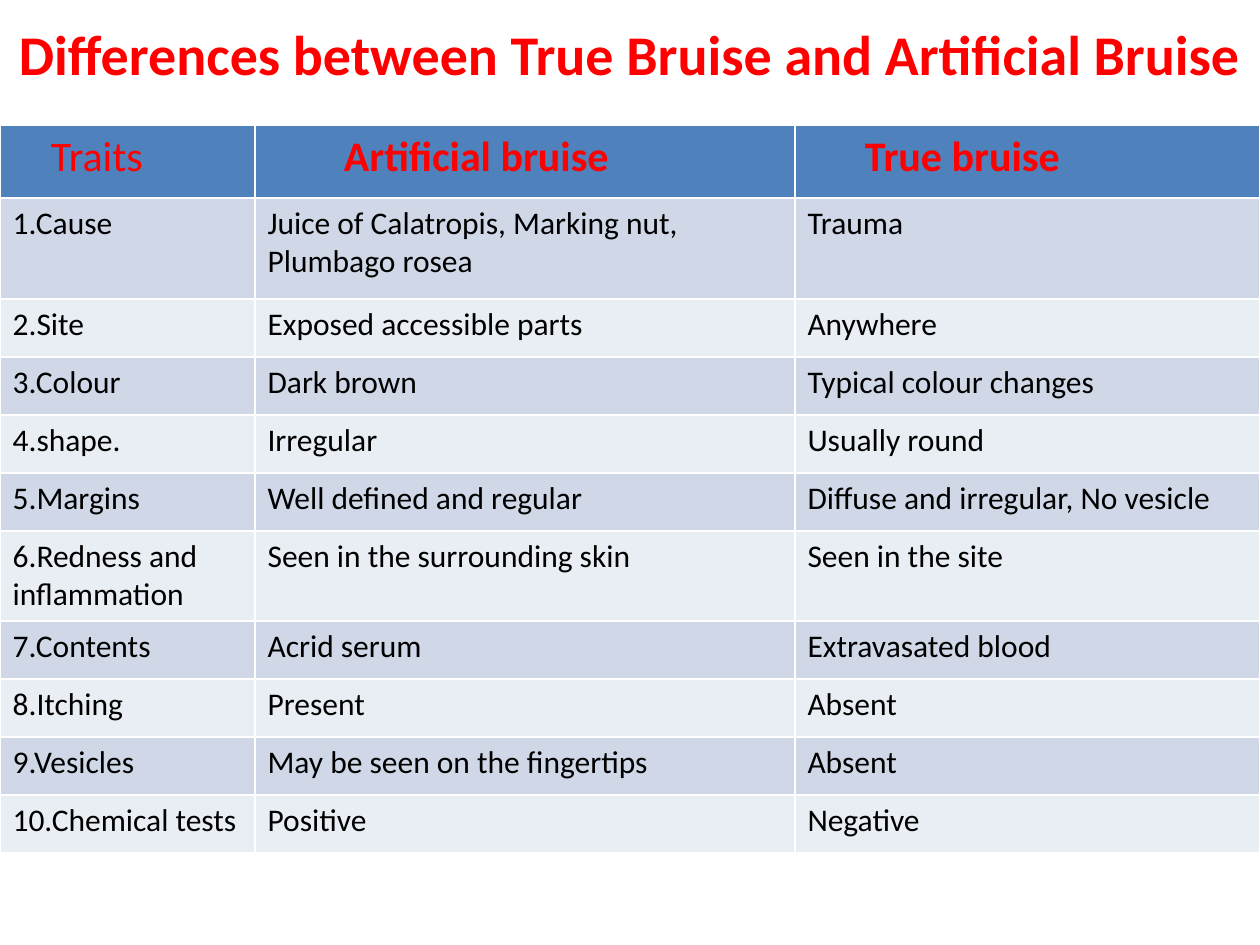
from typing import NamedTuple

from pptx import Presentation
from pptx.dml.color import RGBColor as Rgb
from pptx.enum.text import MSO_ANCHOR as Anchor, MSO_AUTO_SIZE as Fit, PP_ALIGN as Align
from pptx.util import Emu, Pt

SCALE = 914400 / 126  # EMU in one px
WIDTH, HEIGHT = 1260, 945
TITLE_H, TABLE_TOP = 106, 125
HEAD_H, ROW_H = 73, 58
TALL = {1: 101, 6: 90}  # rows with two lines of text
FONT = "Calibri"
COLORS = {
    "red": "FF0000",
    "black": "000000",
    "head": "4F81BD",
    "odd": "D0D8E8",
    "even": "E9EDF4",
}


class Column(NamedTuple):
    head: str
    width: int
    indent: int
    bold: bool


class Trait(NamedTuple):
    name: str
    fake: str
    true: str


COLUMNS = [
    Column("Traits", 255, 51, False),
    Column("Artificial bruise", 540, 89, True),
    Column("True bruise", 465, 70, True),
]
TRAITS = [
    Trait("1.Cause", "Juice of Calatropis, Marking nut, Plumbago rosea", "Trauma"),
    Trait("2.Site", "Exposed accessible parts", "Anywhere"),
    Trait("3.Colour", "Dark brown", "Typical colour changes"),
    Trait("4.shape.", "Irregular", "Usually round"),
    Trait("5.Margins", "Well defined and regular", "Diffuse and irregular, No vesicle"),
    Trait("6.Redness and inflammation", "Seen in the surrounding skin", "Seen in the site"),
    Trait("7.Contents", "Acrid serum", "Extravasated blood"),
    Trait("8.Itching", "Present", "Absent"),
    Trait("9.Vesicles", "May be seen on the fingertips", "Absent"),
    Trait("10.Chemical tests", "Positive", "Negative"),
]


def px(count: int) -> Emu:
    return Emu(round(count * SCALE))


def color(name: str) -> Rgb:
    return Rgb.from_string(COLORS[name])


def style(para, size: int, ink: str, bold: bool) -> None:
    font = para.font
    font.name, font.size, font.bold = FONT, Pt(size), bold
    font.color.rgb = color(ink)


def fill_cell(cell, text: str, fill: str, size: int, ink: str, bold: bool) -> None:
    cell.text = text
    cell.fill.solid()
    cell.fill.fore_color.rgb = color(fill)
    style(cell.text_frame.paragraphs[0], size, ink, bold)


def add_title(slide, text: str) -> None:
    title = slide.shapes.title
    title.left, title.top = px(0), px(0)
    title.width, title.height = px(WIDTH), px(TITLE_H)
    frame = title.text_frame
    frame.text = text
    frame.auto_size = Fit.NONE
    frame.vertical_anchor = Anchor.MIDDLE
    para = frame.paragraphs[0]
    para.alignment = Align.CENTER
    style(para, 32, "red", True)


def add_traits(slide) -> None:
    heights = [HEAD_H] + [TALL.get(n, ROW_H) for n in range(1, len(TRAITS) + 1)]
    table = slide.shapes.add_table(
        len(heights), len(COLUMNS), px(0), px(TABLE_TOP), px(WIDTH), px(sum(heights))
    ).table
    for row, height in zip(table.rows, heights):
        row.height = px(height)
    for c, col in enumerate(COLUMNS):
        table.columns[c].width = px(col.width)
        cell = table.cell(0, c)
        fill_cell(cell, col.head, "head", 24, "red", col.bold)
        cell.margin_left = px(col.indent)
    for r, trait in enumerate(TRAITS, 1):
        band = "odd" if r % 2 else "even"
        for c, text in enumerate(trait):
            fill_cell(table.cell(r, c), text, band, 18, "black", False)


def main() -> None:
    deck = Presentation()
    deck.slide_width, deck.slide_height = px(WIDTH), px(HEIGHT)
    slide = deck.slides.add_slide(deck.slide_layouts.get_by_name("Title Only"))
    add_title(slide, "Differences between True Bruise and Artificial Bruise")
    add_traits(slide)
    deck.save("out.pptx")


if __name__ == "__main__":
    main()
